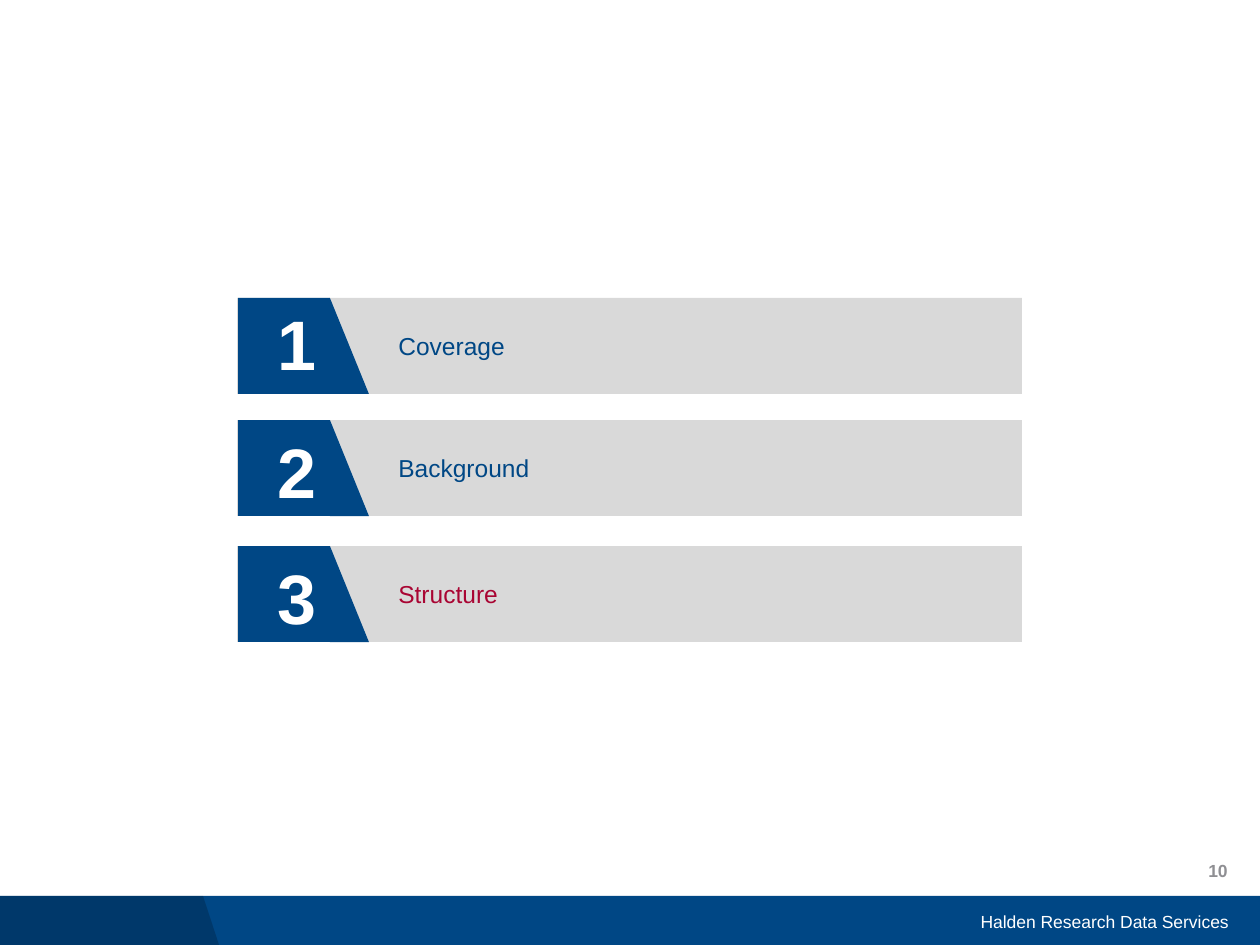
import dataclasses

import lxml.etree
import pptx
import pptx.dml.color
import pptx.enum.shapes
import pptx.enum.text
import pptx.oxml.ns
import pptx.util

SHAPE = pptx.enum.shapes.MSO_SHAPE
ANCHOR = pptx.enum.text.MSO_ANCHOR
ALIGN = pptx.enum.text.PP_ALIGN
SCALE = 914400 / 126  # EMU in one px


@dataclasses.dataclass(frozen=True)
class Theme:
    font: str = "Arial"
    blue: str = "004785"
    red: str = "A90533"
    bar: str = "D9D9D9"
    white: str = "FFFFFF"
    muted: str = "8F8F93"
    black: str = "000000"
    number_size: int = 40
    label_size: int = 14
    footer_size: int = 10


THEME = Theme()


def px(*lengths):
    return [round(length * SCALE) for length in lengths]


def rgb(color):
    return pptx.dml.color.RGBColor.from_string(color)


def paint(shape, color):
    shape.shadow.inherit = False
    shape.fill.solid()
    shape.fill.fore_color.rgb = rgb(color)
    shape.line.fill.background()


def add_block(shapes, kind, place, color):
    block = shapes.add_shape(kind, *px(*place))
    paint(block, color)
    return block


def add_text(shapes, place, text, size, color, bold=False, align=ALIGN.LEFT, anchor=ANCHOR.TOP):
    box = shapes.add_textbox(*px(*place))
    frame = box.text_frame
    frame.word_wrap = True
    frame.vertical_anchor = anchor
    frame.text = text
    para = frame.paragraphs[0]
    para.alignment = align
    font = para.runs[0].font
    font.name = THEME.font
    font.size = pptx.util.Pt(size)
    font.bold = bold
    font.color.rgb = rgb(color)


def add_footer(page):
    # Blue band with a slanted, darker left end
    add_block(page.shapes, SHAPE.RECTANGLE, (0, 896, 1260, 49), THEME.blue)
    builder = page.shapes.build_freeform(0, 896, scale=SCALE)
    builder.add_line_segments([(203, 896), (219, 945), (0, 945)], close=True)
    shade = builder.convert_to_shape()
    paint(shade, THEME.black)
    color = shade.fill._xPr.find(".//" + pptx.oxml.ns.qn("a:srgbClr"))
    lxml.etree.SubElement(color, pptx.oxml.ns.qn("a:alpha"), val="20000")

    # Department name and page number
    right = {"align": ALIGN.RIGHT, "anchor": ANCHOR.MIDDLE}
    add_text(page.shapes, (815, 897, 426, 50), "Halden Research Data Services",
             THEME.footer_size, THEME.white, **right)
    add_text(page.shapes, (956, 846, 284, 50), "10",
             THEME.footer_size, THEME.muted, bold=True, **right)


def add_agenda_row(page, number, top, number_top, label, color):
    row = page.shapes.add_group_shape().shapes
    add_block(row, SHAPE.RECTANGLE, (237, top, 785, 96), THEME.bar)
    add_block(row, SHAPE.RECTANGLE, (238, top, 92, 96), THEME.blue)
    slant = add_block(row, SHAPE.ISOSCELES_TRIANGLE, (330, top, 39, 96), THEME.blue)
    slant.adjustments[0] = 0
    add_text(row, (265, number_top, 74, 97), str(number),
             THEME.number_size, THEME.white, bold=True)
    add_text(row, (386, top + 27, 490, 43), label, THEME.label_size, color)


def main():
    deck = pptx.Presentation()
    deck.slide_width, deck.slide_height = px(1260, 945)
    page = deck.slides.add_slide(deck.slide_layouts[6])

    add_footer(page)

    # Agenda: the current section is red
    agenda = [
        (298, 294, "Coverage", THEME.blue),
        (420, 422, "Background", THEME.blue),
        (546, 548, "Structure", THEME.red),
    ]
    for number, row in enumerate(agenda, start=1):
        add_agenda_row(page, number, *row)

    deck.save("out.pptx")


if __name__ == "__main__":
    main()
